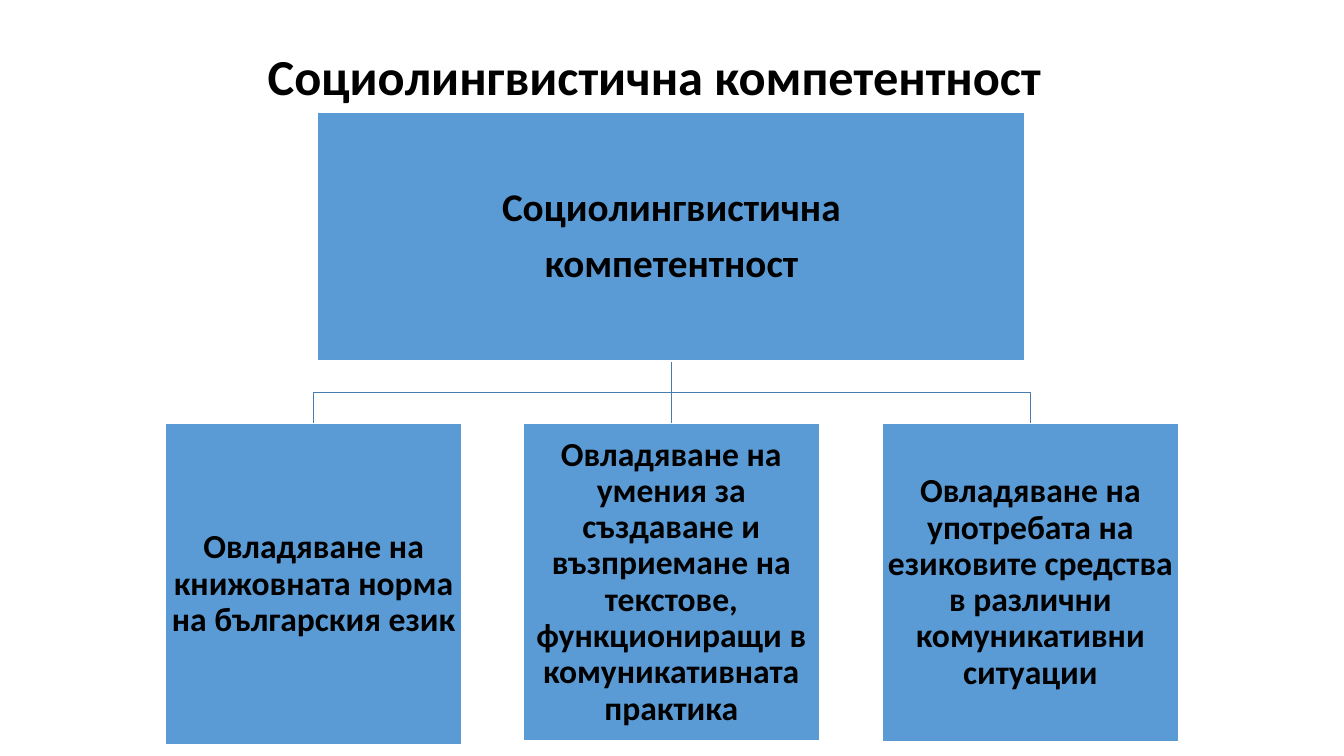
from lxml import etree
from pptx import Presentation
from pptx.dml.color import RGBColor
from pptx.enum.shapes import MSO_CONNECTOR, MSO_SHAPE
from pptx.enum.text import MSO_ANCHOR, PP_ALIGN
from pptx.oxml.ns import qn
from pptx.util import Pt

BLUE = RGBColor(0x5B, 0x9B, 0xD5)
LINE_BLUE = RGBColor(0x49, 0x7C, 0xAB)
WHITE = RGBColor(0xFF, 0xFF, 0xFF)
BLACK = RGBColor(0, 0, 0)

ROOT_LEFT, ROOT_TOP, ROOT_WIDTH, ROOT_HEIGHT = 227, 80, 505, 178
ROOT_CENTER = ROOT_LEFT + ROOT_WIDTH / 2
ROOT_BOTTOM = ROOT_TOP + ROOT_HEIGHT
BRANCH_TOP, BRANCH_WIDTH = 302.4, 212
BUS_Y = (ROOT_BOTTOM + BRANCH_TOP) / 2

# center, height, text
BRANCHES = [
    (224, 229.7, "Овладяване на книжовната норма на българския език"),
    (ROOT_CENTER, 226.8, "Овладяване на умения за създаване и възприемане на "
                         "текстове, функциониращи в комуникативната практика"),
    (736, 227.5, "Овладяване на употребата на езиковите средства "
                 "в различни комуникативни ситуации"),
]


def write(frame, text, size):
    frame.word_wrap = True
    frame.text = text
    for para in frame.paragraphs:
        para.alignment = PP_ALIGN.CENTER
        for span in para.runs:
            span.font.name = "Calibri"
            span.font.size = Pt(size)
            span.font.bold = True
            span.font.color.rgb = BLACK


def add_box(left, top, width, height, text, size):
    box = page.shapes.add_shape(MSO_SHAPE.RECTANGLE, Pt(left), Pt(top), Pt(width), Pt(height))
    box.shadow.inherit = False
    box.fill.solid()
    box.fill.fore_color.rgb = BLUE
    box.line.color.rgb = WHITE
    box.line.width = Pt(1)
    frame = box.text_frame
    frame.margin_left = frame.margin_right = frame.margin_top = frame.margin_bottom = Pt(1.4)
    frame.vertical_anchor = MSO_ANCHOR.MIDDLE
    write(frame, text, size)
    for para in frame.paragraphs:
        para.line_spacing = 0.9
        para.space_after = Pt(size * 0.35)
    return box


deck = Presentation()
deck.slide_width, deck.slide_height = Pt(960), Pt(540)
page = deck.slides.add_slide(deck.slide_layouts[6])

# Lines come first so that the boxes lie over their ends
for center in (BRANCHES[2][0], BRANCHES[0][0]):
    builder = page.shapes.build_freeform(Pt(ROOT_CENTER), Pt(ROOT_BOTTOM))
    builder.add_line_segments(
        [(Pt(ROOT_CENTER), Pt(BUS_Y)), (Pt(center), Pt(BUS_Y)), (Pt(center), Pt(BRANCH_TOP))],
        close=False,
    )
    elbow = builder.convert_to_shape()
    elbow.shadow.inherit = False
    elbow.fill.background()
    elbow.line.color.rgb = LINE_BLUE
    elbow.line.width = Pt(1)

stem = page.shapes.add_connector(
    MSO_CONNECTOR.STRAIGHT, Pt(ROOT_CENTER), Pt(ROOT_BOTTOM), Pt(ROOT_CENTER), Pt(BRANCH_TOP))
stem.line.color.rgb = LINE_BLUE
stem.line.width = Pt(1)
etree.SubElement(stem._element.spPr, qn("a:effectLst"))

root = add_box(ROOT_LEFT, ROOT_TOP, ROOT_WIDTH, ROOT_HEIGHT,
               "Социолингвистична\nкомпетентност", 28)
branches = [
    add_box(center - BRANCH_WIDTH / 2, BRANCH_TOP, BRANCH_WIDTH, height, text, 24)
    for center, height, text in BRANCHES
]
stem.begin_connect(root, 2)
stem.end_connect(branches[1], 0)

title = page.shapes.add_textbox(Pt(49), Pt(29), Pt(837), Pt(51))
write(title.text_frame, "Социолингвистична компетентност", 36)

deck.save("out.pptx")
